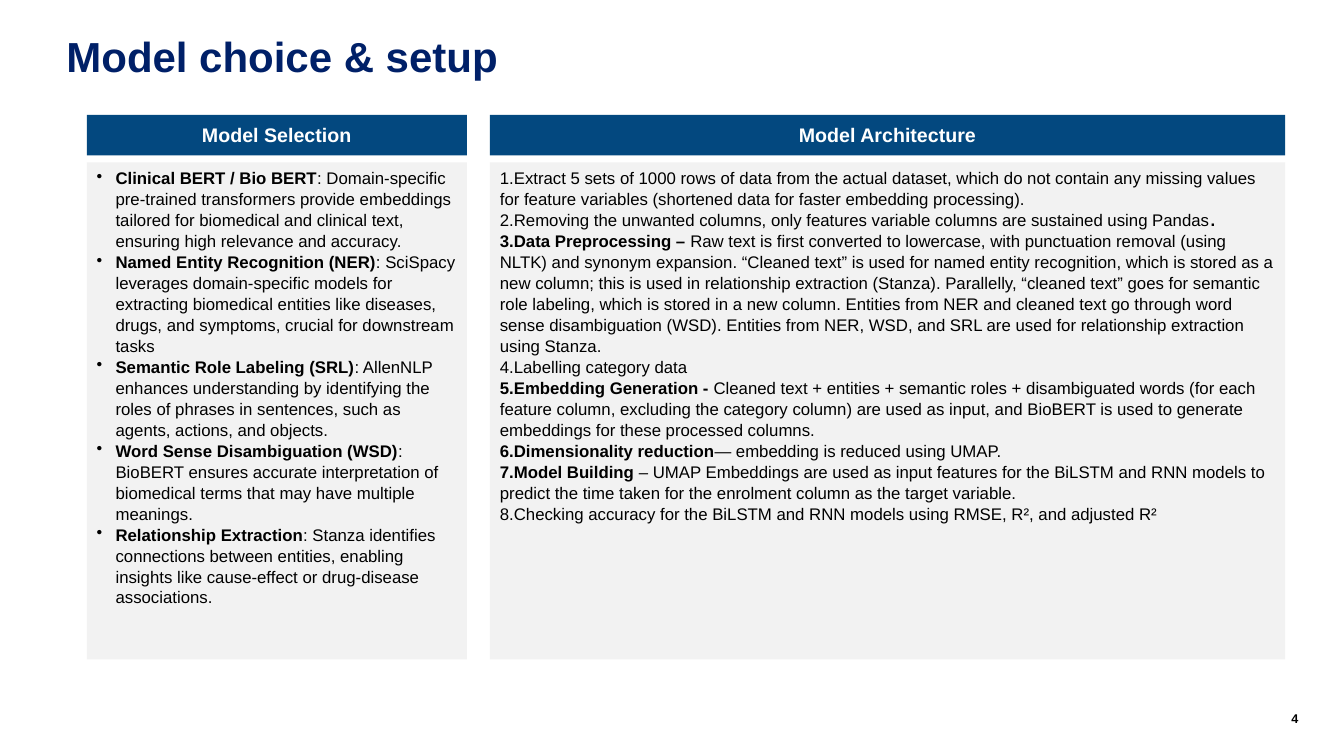
import pptx
import pptx.util
from lxml import etree
from pptx.dml.color import RGBColor
from pptx.enum.shapes import MSO_SHAPE
from pptx.enum.text import MSO_ANCHOR, PP_ALIGN
from pptx.oxml.ns import qn

Pt = pptx.util.Pt


class Theme:
    font = "Arial"
    navy = RGBColor.from_string("002068")
    blue = RGBColor.from_string("03487F")
    panel = RGBColor.from_string("F2F2F2")
    white = RGBColor.from_string("FFFFFF")
    black = RGBColor.from_string("000000")
    title, heading, body, number = Pt(30), Pt(14), Pt(12), Pt(9)
    body_spacing = 1.04


# Each entry lists its spans as (text, bold)
SELECTION = [
    [("Clinical BERT / Bio BERT", True),
     (": Domain-specific pre-trained transformers provide embeddings tailored for biomedical "
      "and clinical text, ensuring high relevance and accuracy.", False)],
    [("Named Entity Recognition (NER)", True),
     (": SciSpacy leverages domain-specific models for extracting biomedical entities like "
      "diseases, drugs, and symptoms, crucial for downstream tasks", False)],
    [("Semantic Role Labeling (SRL)", True),
     (": AllenNLP enhances understanding by identifying the roles of phrases in sentences, "
      "such as agents, actions, and objects.", False)],
    [("Word Sense Disambiguation (WSD)", True),
     (": BioBERT ensures accurate interpretation of biomedical terms that may have multiple "
      "meanings.", False)],
    [("Relationship Extraction", True),
     (": Stanza identifies connections between entities, enabling insights like cause-effect "
      "or drug-disease associations.", False)],
]

ARCHITECTURE = [
    [("Extract 5 sets of 1000 rows of data from the actual dataset, which do not contain any "
      "missing values for feature variables (shortened data for faster embedding processing).",
      False)],
    [("Removing the unwanted columns, only features variable columns are sustained using Pandas",
      False), (".", True)],
    [("Data Preprocessing – ", True),
     ("Raw text is first converted to lowercase, with punctuation removal (using NLTK) and "
      "synonym expansion. “Cleaned text” is used for named entity recognition, which is stored "
      "as a new column; this is used in relationship extraction (Stanza). Parallelly, “cleaned "
      "text” goes for semantic role labeling, which is stored in a new column. Entities from "
      "NER and cleaned text go through word sense disambiguation (WSD). Entities from NER, WSD, "
      "and SRL are used for relationship extraction using Stanza.", False)],
    [("Labelling category data", False)],
    [("Embedding Generation - ", True),
     ("Cleaned text + entities + semantic roles + disambiguated words (for each feature column, "
      "excluding the category column) are used as input, and BioBERT is used to generate "
      "embeddings for these processed columns.", False)],
    [("Dimensionality reduction", True), ("— embedding is reduced using UMAP.", False)],
    [("Model Building ", True),
     ("– UMAP Embeddings are used as input features for the BiLSTM and RNN models to predict "
      "the time taken for the enrolment column as the target variable.", False)],
    [("Checking accuracy for the BiLSTM and RNN models using RMSE, R², and adjusted R²", False)],
]

# List markers: tag, its attributes, and the hanging indent
BULLET = ("a:buChar", {"char": "•"}, Pt(13.5))
NUMBER = ("a:buAutoNum", {"type": "arabicPeriod"}, Pt(0))


def apply(target, **values):
    for name, value in values.items():
        setattr(target, name, value)


def add_marker(para, marker):
    tag, attributes, indent = marker
    properties = para._p.get_or_add_pPr()
    properties.set("marL", str(int(indent)))
    properties.set("indent", str(-int(indent)))
    etree.SubElement(properties, qn(tag), attributes)


def write_span(para, text, size, color, bold):
    span = para.add_run()
    span.text = text
    apply(span.font, name=Theme.font, size=size, bold=bold)
    span.font.color.rgb = color


def add_label(page, place, text, size, color, **layout):
    box = page.shapes.add_textbox(*map(Pt, place))
    apply(box.text_frame, word_wrap=True, margin_left=0, margin_right=0,
          margin_top=0, margin_bottom=0)
    para = box.text_frame.paragraphs[0]
    apply(para, **layout)
    write_span(para, text, size, color, True)


def add_block(page, place, fill, anchor):
    block = page.shapes.add_shape(MSO_SHAPE.RECTANGLE, *map(Pt, place))
    block.shadow.inherit = False
    block.fill.solid()
    block.fill.fore_color.rgb = fill
    block.line.fill.background()
    apply(block.text_frame, word_wrap=True, vertical_anchor=anchor)
    return block.text_frame


def add_column(page, left, width, heading, entries, marker):
    # Heading bar
    bar = add_block(page, (left, 82, width, 29), Theme.blue, MSO_ANCHOR.MIDDLE)
    bar.paragraphs[0].alignment = PP_ALIGN.CENTER
    write_span(bar.paragraphs[0], heading, Theme.heading, Theme.white, True)

    # Panel with the list
    panel = add_block(page, (left, 116, width, 355), Theme.panel, MSO_ANCHOR.TOP)
    for index, spans in enumerate(entries):
        para = panel.add_paragraph() if index else panel.paragraphs[0]
        add_marker(para, marker)
        apply(para, alignment=PP_ALIGN.LEFT, line_spacing=Theme.body_spacing)
        for text, bold in spans:
            write_span(para, text, Theme.body, Theme.black, bold)


def main():
    deck = pptx.Presentation()
    apply(deck, slide_width=Pt(960), slide_height=Pt(540))
    page = deck.slides.add_slide(deck.slide_layouts[6])

    # Title and page number
    add_label(page, (47.5, 24.5, 693, 35), "Model choice & setup",
              Theme.title, Theme.navy, line_spacing=0.95)
    add_label(page, (890.5, 507.5, 37, 14.5), "4",
              Theme.number, Theme.black, alignment=PP_ALIGN.RIGHT)

    # Two columns
    add_column(page, 62, 271.5, "Model Selection", SELECTION, BULLET)
    add_column(page, 350, 568, "Model Architecture", ARCHITECTURE, NUMBER)

    deck.save("out.pptx")


if __name__ == "__main__":
    main()
